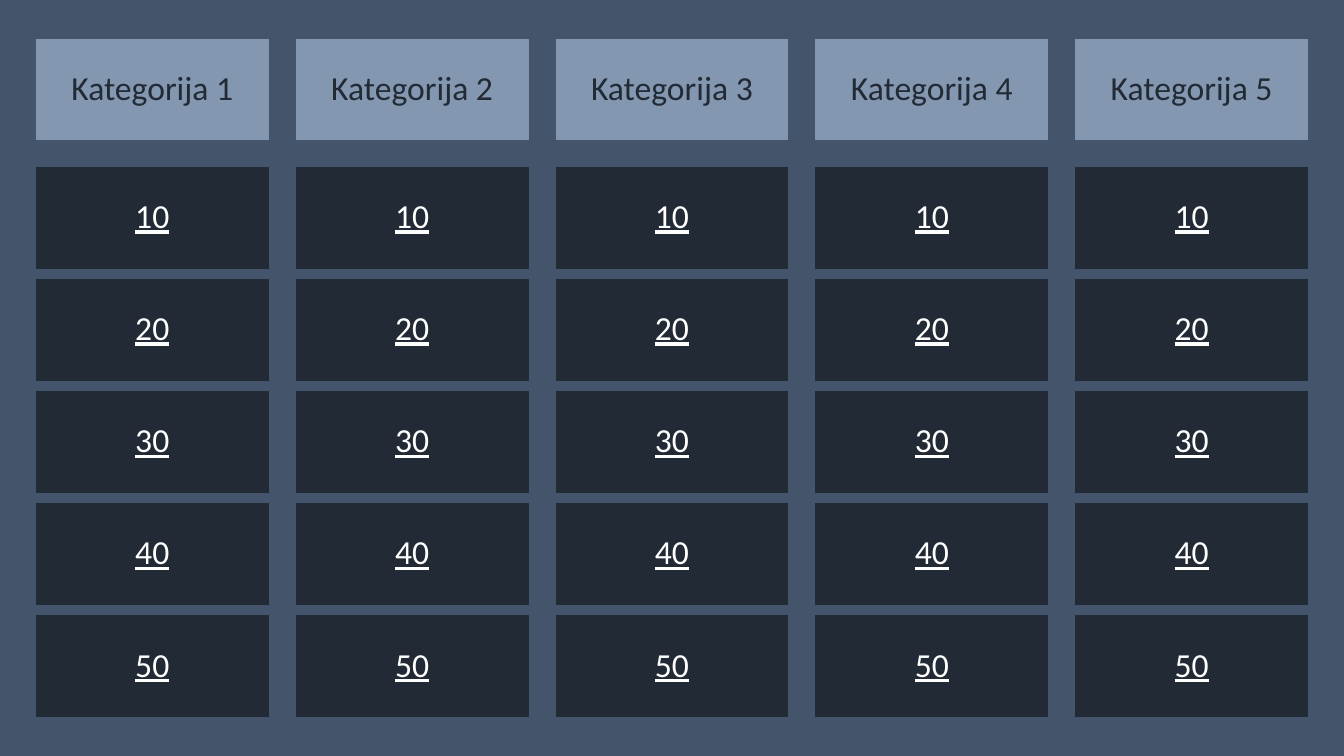
from dataclasses import dataclass

from pptx import Presentation
from pptx.dml.color import RGBColor
from pptx.enum.shapes import MSO_SHAPE
from pptx.enum.text import MSO_ANCHOR, PP_ALIGN
from pptx.util import Pt

RECT = MSO_SHAPE.RECTANGLE
MIDDLE = MSO_ANCHOR.MIDDLE
CENTER = PP_ALIGN.CENTER


@dataclass(frozen=True)
class Theme:
    background: RGBColor = RGBColor(0x44, 0x54, 0x6A)
    header: RGBColor = RGBColor(0x84, 0x97, 0xB0)
    dark: RGBColor = RGBColor(0x22, 0x2A, 0x35)
    white: RGBColor = RGBColor(0xFF, 0xFF, 0xFF)
    font: str = "Calibri"
    size: int = 24


THEME = Theme()

SLIDE_W, SLIDE_H = 960, 540
TILE_W, TILE_H = 165.6, 72
LEFT, COLUMN_STEP = 26, 185.6
HEADER_TOP = 28
SCORE_TOP, ROW_STEP = 119.5, 80.1
CATEGORIES = [f"Kategorija {n}" for n in range(1, 6)]
SCORES = ["10", "20", "30", "40", "50"]


def set_background(s, color):
    fill = s.background.fill
    fill.solid()
    fill.fore_color.rgb = color


def add_tile(s, x, y, text, fill, color, underline=False):
    sp = s.shapes.add_shape(RECT, Pt(x), Pt(y), Pt(TILE_W), Pt(TILE_H))
    sp.shadow.inherit = False
    sp.fill.solid()
    sp.fill.fore_color.rgb = fill
    sp.line.color.rgb = fill
    sp.line.width = Pt(0.75)
    tf = sp.text_frame
    tf.word_wrap = True
    tf.vertical_anchor = MIDDLE
    p = tf.paragraphs[0]
    p.alignment = CENTER
    p.line_spacing = 0.9
    r = p.add_run()
    r.text = text
    r.font.name = THEME.font
    r.font.size = Pt(THEME.size)
    r.font.color.rgb = color
    r.font.underline = underline


def add_category(s, x, name):
    add_tile(s, x, HEADER_TOP, name, THEME.header, THEME.dark)
    for row, score in enumerate(SCORES):
        y = SCORE_TOP + row * ROW_STEP
        add_tile(s, x, y, score, THEME.dark, THEME.white, underline=True)


def main():
    prs = Presentation()
    prs.slide_width, prs.slide_height = Pt(SLIDE_W), Pt(SLIDE_H)
    s = prs.slides.add_slide(prs.slide_layouts[6])
    set_background(s, THEME.background)
    for column, name in enumerate(CATEGORIES):
        add_category(s, LEFT + column * COLUMN_STEP, name)
    prs.save("out.pptx")


if __name__ == "__main__":
    main()
